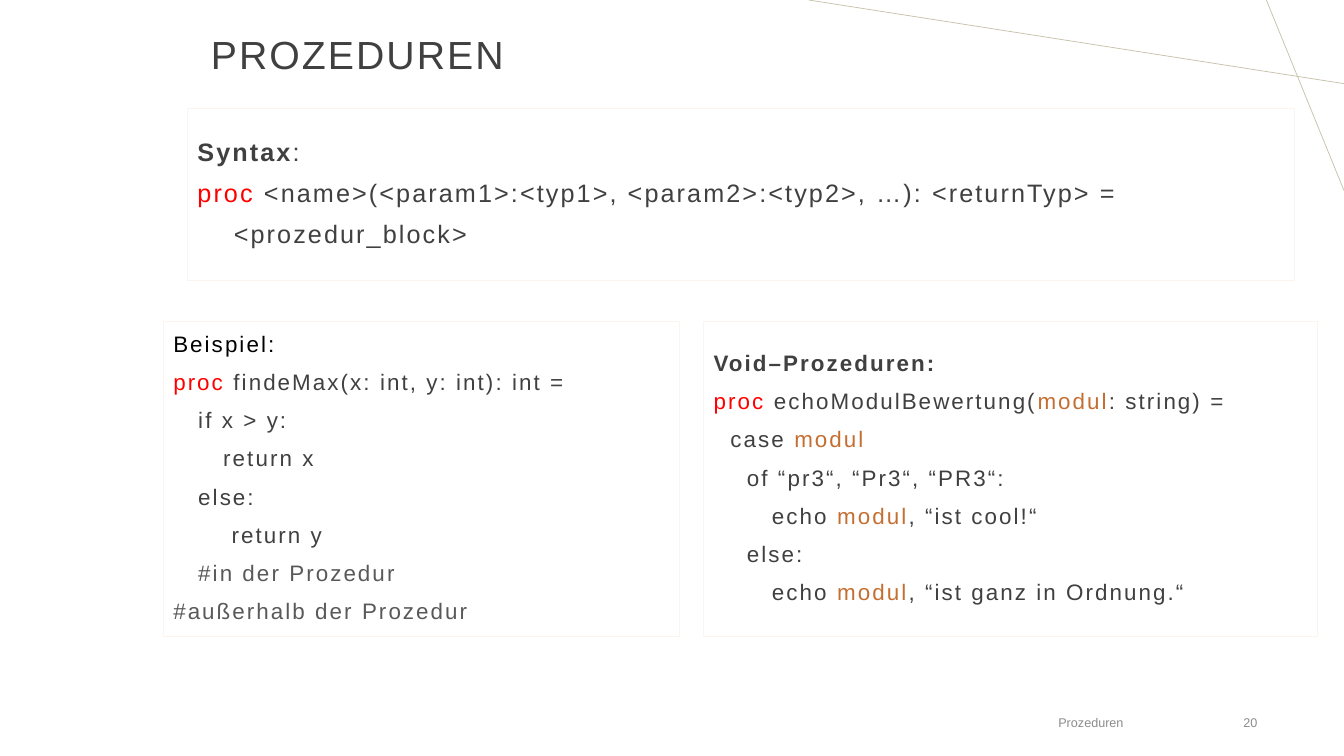
from pptx import Presentation
from pptx.dml.color import RGBColor
from pptx.enum.shapes import MSO_CONNECTOR, MSO_SHAPE
from pptx.enum.text import MSO_ANCHOR, MSO_AUTO_SIZE, PP_ALIGN
from pptx.oxml.ns import qn
from pptx.util import Inches, Pt
from lxml.etree import SubElement

WIDTH, HEIGHT = 13.33, 7.5
FONT = "Arial"
TEXT, KEYWORD, VARIABLE = "404040", "FF0000", "C46E31"
COMMENT, BLACK, MUTED = "595959", "000000", "8C8C8C"
PANEL_BORDER, ACCENT_LINE = "FBF4EF", "C6BFA9"
TRACKING = 1.5

TITLE = "PROZEDUREN"
TITLE_BOX = (-1.06, -0.16, 9.21, 1.45)
ACCENTS = [((WIDTH, 0.83), (8.02, 0)), ((12.56, 0), (WIDTH, 1.89))]
FOOTERS = [
    ("Prozeduren", (8.57, 6.97, 4.5, 0.4), PP_ALIGN.CENTER),
    ("20", (9.57, 6.97, 3, 0.4), PP_ALIGN.RIGHT),
]

# Each code line: indent in characters, then (text, colour, bold) runs
SYNTAX = [
    (0, [("Syntax", TEXT, True), (":", TEXT, False)]),
    (0, [("proc", KEYWORD, False),
         (" <name>(<param1>:<typ1>, <param2>:<typ2>, …): <returnTyp> =", TEXT, False)]),
    (4, [("<prozedur_block>", TEXT, False)]),
]
VOID = [
    (0, [("Void–Prozeduren:", TEXT, True)]),
    (0, [("proc ", KEYWORD, False), ("echoModulBewertung(", TEXT, False),
         ("modul", VARIABLE, False), (": string) =", TEXT, False)]),
    (2, [("case ", TEXT, False), ("modul", VARIABLE, False)]),
    (4, [("of “pr3“, “Pr3“, “PR3“:", TEXT, False)]),
    (7, [("echo ", TEXT, False), ("modul", VARIABLE, False),
         (", “ist cool!“", TEXT, False)]),
    (4, [("else:", TEXT, False)]),
    (7, [("echo ", TEXT, False), ("modul", VARIABLE, False),
         (", “ist ganz in Ordnung.“", TEXT, False)]),
]
EXAMPLE = [
    (0, [("Beispiel:", BLACK, False)]),
    (0, [("proc ", KEYWORD, False), ("findeMax(x: int, y: int): int =", TEXT, False)]),
    (3, [("if x > y:", TEXT, False)]),
    (6, [("return x", TEXT, False)]),
    (3, [("else:", TEXT, False)]),
    (7, [("return y", TEXT, False)]),
    (3, [("#in der Prozedur", COMMENT, False)]),
    (0, [("#außerhalb der Prozedur", COMMENT, False)]),
]
PANELS = [
    (SYNTAX, (1.86, 1.08, 10.98, 1.7), 18),
    (VOID, (6.98, 3.19, 6.09, 3.12), 16),
    (EXAMPLE, (1.62, 3.19, 5.12, 3.12), 16),
]


def rgb(value):
    return RGBColor.from_string(value)


def inches(values):
    return [Inches(value) for value in values]


def style_run(run, size, color, bold=False, tracking=0):
    font = run.font
    font.name, font.size, font.bold = FONT, Pt(size), bold
    font.color.rgb = rgb(color)
    if tracking:
        font._element.set("spc", str(round(tracking * 100)))


def prepare_frame(frame):
    frame.word_wrap = True
    frame.auto_size = MSO_AUTO_SIZE.NONE
    frame.vertical_anchor = MSO_ANCHOR.MIDDLE


def add_accent(slide, start, end):
    accent = slide.shapes.add_connector(
        MSO_CONNECTOR.STRAIGHT, *inches(start), *inches(end))
    accent.line.color.rgb = rgb(ACCENT_LINE)
    accent.line.width = Pt(0.5)
    SubElement(accent._element.spPr, qn("a:effectLst"))


def add_title(slide):
    title = slide.shapes.title
    title.left, title.top, title.width, title.height = inches(TITLE_BOX)
    prepare_frame(title.text_frame)
    title.text_frame.text = TITLE
    heading = title.text_frame.paragraphs[0]
    heading.alignment = PP_ALIGN.CENTER
    heading.line_spacing = 0.9
    style_run(heading.runs[0], 28, TEXT, tracking=TRACKING)


def add_panel(slide, lines, box, size):
    panel = slide.shapes.add_shape(MSO_SHAPE.RECTANGLE, *inches(box))
    panel.shadow.inherit = False
    panel.fill.background()
    panel.line.color.rgb = rgb(PANEL_BORDER)
    panel.line.width = Pt(0.75)
    frame = panel.text_frame
    prepare_frame(frame)
    space_width = size * 0.278 + TRACKING
    for index, (indent, runs) in enumerate(lines):
        line = frame.add_paragraph() if index else frame.paragraphs[0]
        line.alignment = PP_ALIGN.LEFT
        line.line_spacing = 0.9
        line.space_before = Pt(10)
        properties = line._p.get_or_add_pPr()
        properties.set("marL", str(Pt(indent * space_width)))
        properties.set("indent", "0")
        for text, color, bold in runs:
            run = line.add_run()
            run.text = text
            style_run(run, size, color, bold, TRACKING)


def add_footer(slide, text, box, alignment):
    frame = slide.shapes.add_textbox(*inches(box)).text_frame
    prepare_frame(frame)
    frame.text = text
    frame.paragraphs[0].alignment = alignment
    style_run(frame.paragraphs[0].runs[0], 9, MUTED)


def main():
    deck = Presentation()
    deck.slide_width, deck.slide_height = inches((WIDTH, HEIGHT))
    slide = deck.slides.add_slide(deck.slide_layouts[5])
    for start, end in ACCENTS:
        add_accent(slide, start, end)
    add_title(slide)
    for lines, box, size in PANELS:
        add_panel(slide, lines, box, size)
    for text, box, alignment in FOOTERS:
        add_footer(slide, text, box, alignment)
    deck.save("out.pptx")


if __name__ == "__main__":
    main()
